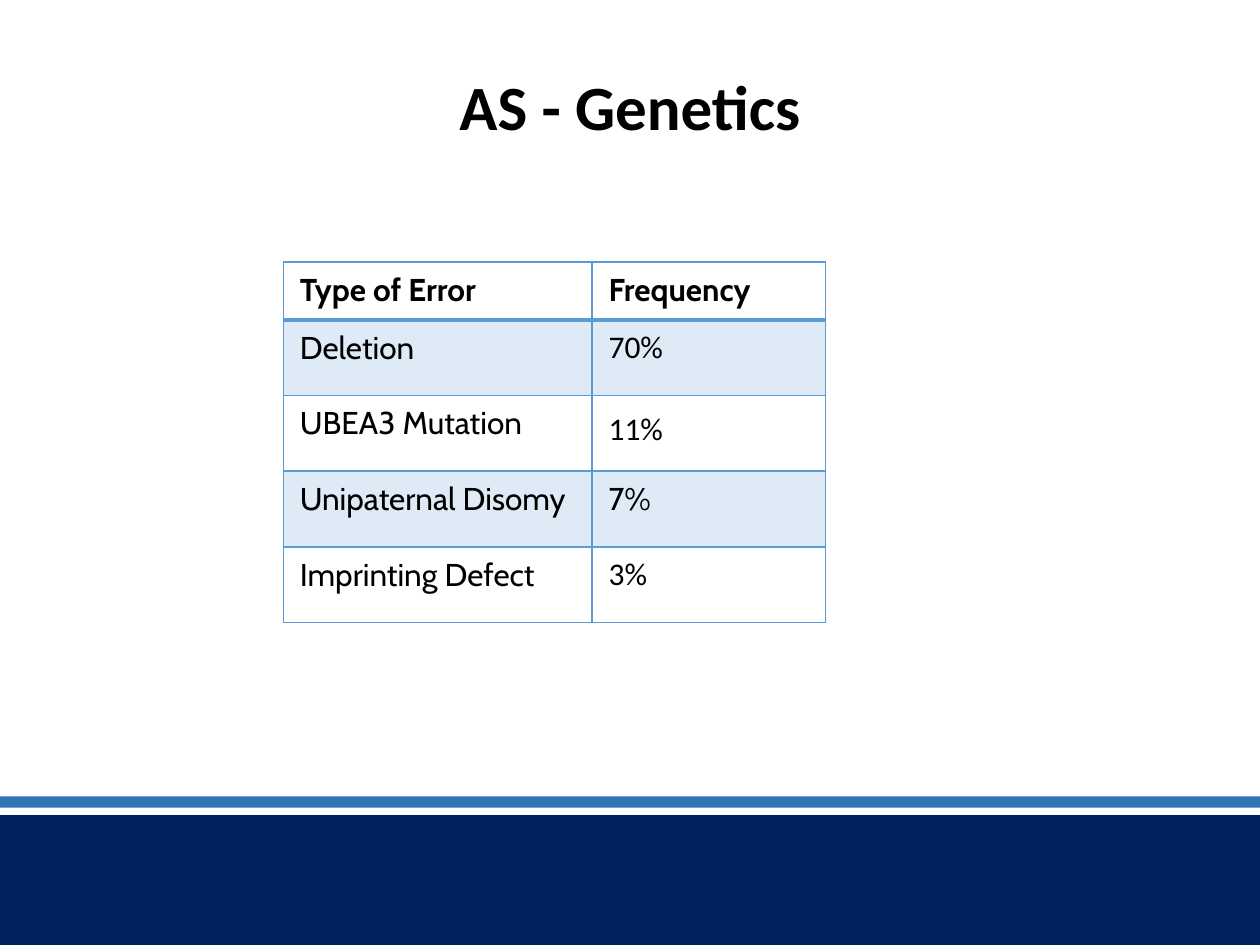
from lxml.etree import SubElement
from pptx import Presentation
from pptx.dml.color import RGBColor
from pptx.enum.shapes import MSO_SHAPE as Shape
from pptx.enum.text import MSO_ANCHOR as Anchor, PP_ALIGN as Align
from pptx.oxml.ns import qn
from pptx.util import Inches, Pt

SLIDE_WIDTH, SLIDE_HEIGHT = 10, 7.5
TITLE_ONLY = 5


def color(hex_text):
    return RGBColor.from_string(hex_text)


class SlideBuilder:
    """Holds the style and the current slide; places are shares of the slide."""
    navy, blue, accent, black = "002060", "2E75B6", "5B9BD5", "000000"
    heading_font, body_font = "Calibri", "Cabin"
    band_opacity = 20

    def __init__(self, presentation):
        self.width = presentation.slide_width
        self.height = presentation.slide_height
        layout = presentation.slide_layouts[TITLE_ONLY]
        self.slide = presentation.slides.add_slide(layout)

    def box(self, left, top, width, height):
        return (round(left * self.width), round(top * self.height),
                round(width * self.width), round(height * self.height))

    def style_font(self, paragraph, name, size, bold):
        for run in paragraph.runs:
            run.font.name = name
            run.font.size = Pt(size)
            run.font.bold = bold
            run.font.color.rgb = color(self.black)

    def band(self, top, height, fill):
        """Full-width bar across the slide."""
        shape = self.slide.shapes.add_shape(
            Shape.RECTANGLE, *self.box(0, top, 1, height))
        shape.shadow.inherit = False
        shape.fill.solid()
        shape.fill.fore_color.rgb = color(fill)
        shape.line.fill.background()

    def title(self, text, left, top, width, height):
        shape = self.slide.shapes.title
        shape.left, shape.top, shape.width, shape.height = self.box(
            left, top, width, height)
        frame = shape.text_frame
        frame.text = text
        frame.word_wrap = True
        frame.vertical_anchor = Anchor.TOP
        frame.margin_left = frame.margin_right = Inches(0.1)
        frame.margin_top = frame.margin_bottom = Inches(0.1)
        paragraph = frame.paragraphs[0]
        paragraph.alignment = Align.CENTER
        paragraph.line_spacing = 0.9
        self.style_font(paragraph, self.heading_font, 36, True)

    def table(self, rows, left, top, column_shares, row_shares):
        """Each row is a list of (text, font name, line spacing)."""
        place = self.box(left, top, sum(column_shares), sum(row_shares))
        table = self.slide.shapes.add_table(
            len(rows), len(column_shares), *place).table
        table.first_row = table.horz_banding = False
        for column, share in zip(table.columns, column_shares):
            column.width = round(share * self.width)
        for index, (row, share) in enumerate(zip(rows, row_shares)):
            table.rows[index].height = round(share * self.height)
            for cell, content in zip(table.rows[index].cells, row):
                self.cell(cell, index, *content)

    def cell(self, cell, row_index, text, font_name, line_spacing):
        cell.text = text
        cell.margin_left = cell.margin_right = Inches(0.13)
        cell.margin_top = cell.margin_bottom = Inches(0.07)
        paragraph = cell.text_frame.paragraphs[0]
        paragraph.line_spacing = line_spacing
        self.style_font(paragraph, font_name, 18, row_index == 0)
        self.borders(cell, top=2 if row_index == 1 else 1,
                     bottom=2 if row_index == 0 else 1)
        if row_index % 2:
            cell.fill.solid()
            cell.fill.fore_color.rgb = color(self.accent)
            fill_color = cell.fill._xPr.find(qn("a:solidFill"))[0]
            SubElement(fill_color, qn("a:alpha"),
                       val=str(self.band_opacity * 1000))
        else:
            cell.fill.background()

    def borders(self, cell, top, bottom):
        properties = cell._tc.get_or_add_tcPr()
        for side, points in (("L", 1), ("R", 1), ("T", top), ("B", bottom)):
            line = SubElement(properties, qn(f"a:ln{side}"), w=str(Pt(points)))
            fill = SubElement(line, qn("a:solidFill"))
            SubElement(fill, qn("a:srgbClr"), val=self.accent)


def main():
    presentation = Presentation()
    presentation.slide_width = Inches(SLIDE_WIDTH)
    presentation.slide_height = Inches(SLIDE_HEIGHT)

    builder = SlideBuilder(presentation)
    builder.band(6.47 / SLIDE_HEIGHT, 1.03 / SLIDE_HEIGHT, builder.navy)
    builder.band(6.32 / SLIDE_HEIGHT, 0.09 / SLIDE_HEIGHT, builder.blue)
    builder.title("AS - Genetics", 0.05, 0.5 / SLIDE_HEIGHT,
                  0.9, 0.57 / SLIDE_HEIGHT)

    cabin, calibri = builder.body_font, builder.heading_font
    errors = [
        [("Type of Error", cabin, 1), ("Frequency", cabin, 1)],
        [("Deletion", cabin, 1), ("70%", calibri, 1)],
        [("UBEA3 Mutation", cabin, 1), ("11%", calibri, 1.15)],
        [("Unipaternal Disomy", cabin, 1), ("7%", cabin, 1)],
        [("Imprinting Defect", cabin, 1), ("3%", calibri, 1)],
    ]
    header_share, body_share = 0.46 / SLIDE_HEIGHT, 0.6 / SLIDE_HEIGHT
    builder.table(errors, 0.225, 2.08 / SLIDE_HEIGHT, [0.245, 0.185],
                  [header_share] + [body_share] * (len(errors) - 1))
    presentation.save("out.pptx")


if __name__ == "__main__":
    main()
